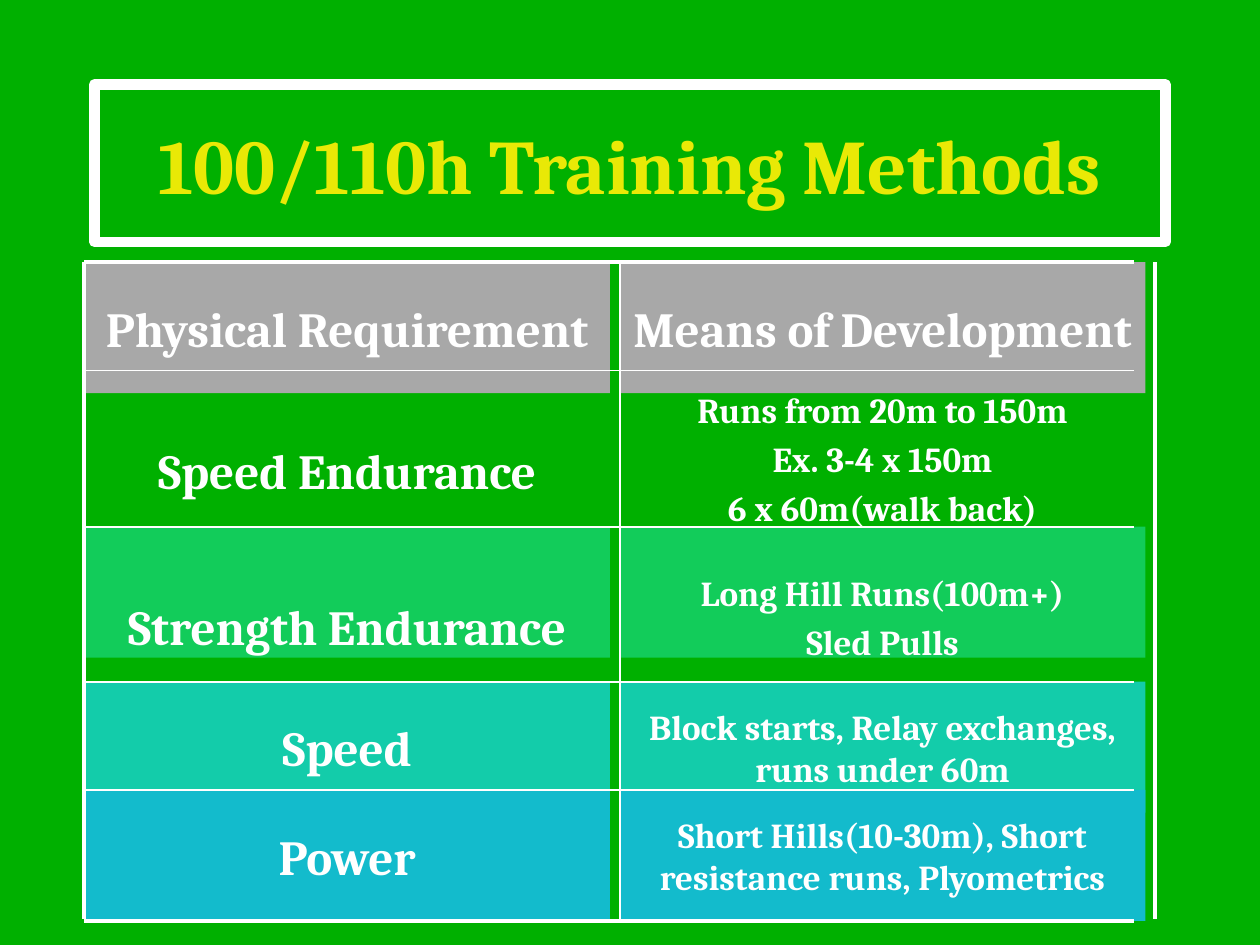
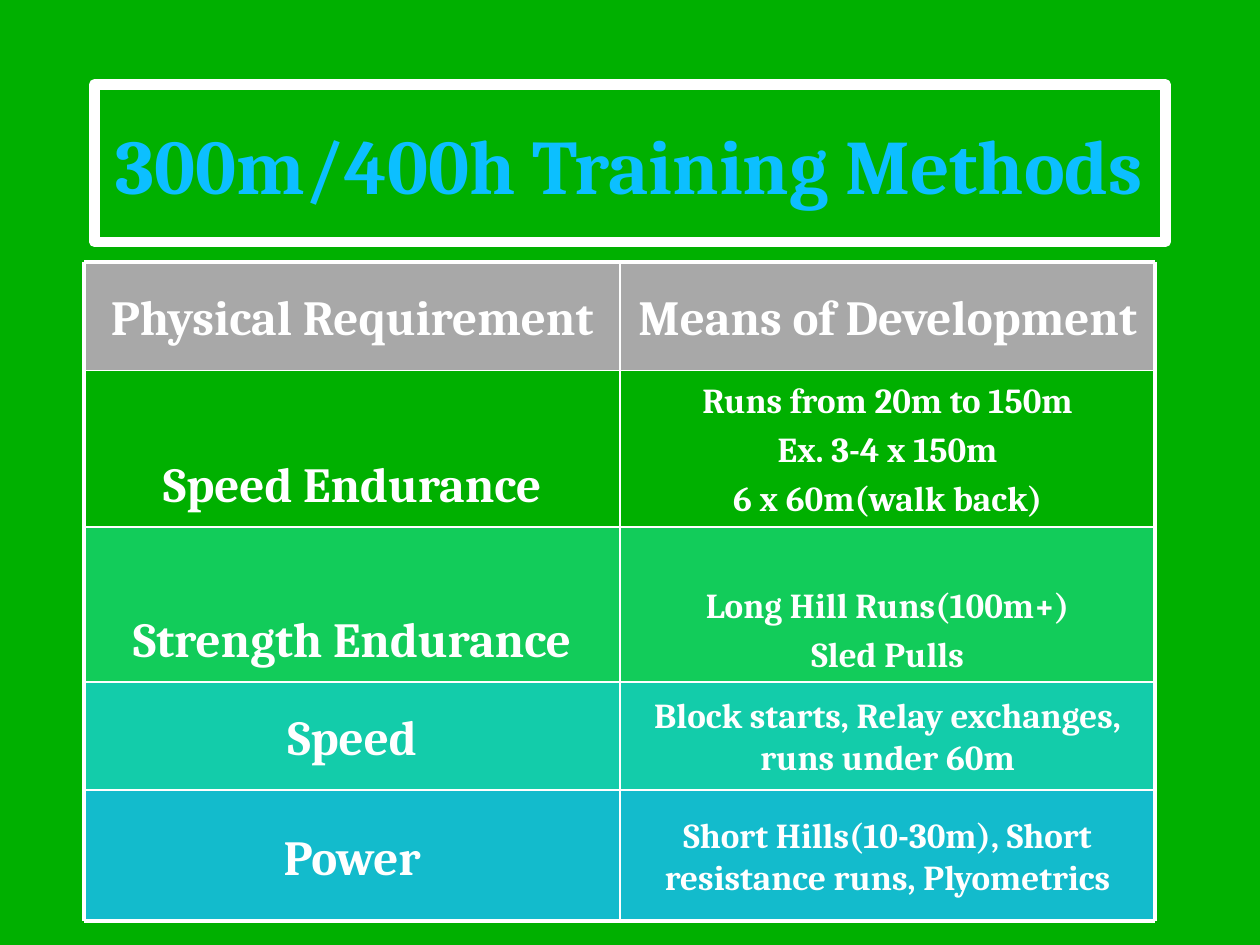
from lxml import etree
from pptx import Presentation
from pptx.dml.color import RGBColor as RGB
from pptx.enum.shapes import MSO_CONNECTOR as CONNECTOR, MSO_SHAPE as SHAPE
from pptx.enum.text import MSO_ANCHOR as ANCHOR, PP_ALIGN as ALIGN
from pptx.oxml.ns import qn
from pptx.util import Inches, Pt

COLORS = {
    "field": "00B000",
    "white": "FFFFFF",
    "yellow": "E9E906",
    "sky": "0CBFFF",
    "header": "A8A8A8",
    "strength": "12CC5A",
    "speed": "13CCAA",
    "power": "13BBCC",
}
FONT = "Cambria"
LEFT, MIDDLE, RIGHT = 0.67, 4.92, 9.17
ROW_EDGES = [2.08, 2.94, 4.18, 5.41, 6.27, 7.31]
BODY_INSETS = {"margin_left": 0.1, "margin_right": 0.1, "margin_top": 0.05, "margin_bottom": 0.05}
LABEL_DROP = {"margin_top": 0.54, "margin_bottom": 0}
DETAIL_DROP = {"margin_top": 0.39, "margin_bottom": 0}

ROWS = [
    (3, "speed", "Speed", {}, ["Block starts, Relay exchanges, runs under 60m"], {}),
    (4, "power", "Power", {}, ["Short Hills(10-30m), Short resistance runs, Plyometrics"], {}),
    (2, "strength", "Strength Endurance", LABEL_DROP, ["Long Hill Runs(100m+)", "Sled Pulls"], DETAIL_DROP),
    (1, "field", "Speed Endurance", LABEL_DROP, ["Runs from 20m to 150m", "Ex. 3-4 x 150m", "6 x 60m(walk back)"], {}),
    (0, "header", "Physical Requirement", {}, ["Means of Development"], {}),
]

SLIDES = [
    {
        "title": "100/110h Training Methods", "color": "yellow",
        "cell_width": 4.17, "cell_heights": [1.04] * 5,
        "moved_detail_tops": {1: 3.12}, "rule_right": 9, "rule_bottom": 7.29,
    },
    {
        "title": "300m/400h Training Methods", "color": "sky",
        "cell_width": 4.25,
        "cell_heights": [bottom - top for top, bottom in zip(ROW_EDGES, ROW_EDGES[1:])],
        "moved_detail_tops": {}, "rule_right": RIGHT, "rule_bottom": 7.31,
    },
]


def add_box(shapes, box, lines, size, color="white", insets={}):
    shape = shapes.add_shape(SHAPE.RECTANGLE, *[Inches(value) for value in box])
    shape.shadow.inherit = False
    shape.fill.background()
    shape.line.fill.background()
    frame = shape.text_frame
    frame.word_wrap = True
    frame.vertical_anchor = ANCHOR.MIDDLE
    for name, value in {**BODY_INSETS, **insets}.items():
        setattr(frame, name, Inches(value))
    for index, line in enumerate(lines):
        paragraph = frame.add_paragraph() if index else frame.paragraphs[0]
        paragraph.alignment = ALIGN.CENTER
        if index:
            paragraph.space_before = Pt(size * 0.2)
        run = paragraph.add_run()
        run.text = line
        for name, value in {"name": FONT, "size": Pt(size), "bold": True}.items():
            setattr(run.font, name, value)
        run.font.color.rgb = RGB.from_string(COLORS[color])
    return shape


def add_rule(shapes, ends, width):
    rule = shapes.add_connector(CONNECTOR.STRAIGHT, *[Inches(value) for value in ends])
    rule.line.color.rgb = RGB.from_string(COLORS["white"])
    rule.line.width = Pt(width)
    etree.SubElement(rule._element.spPr, qn("a:effectLst"))


presentation = Presentation()
presentation.slide_width = Inches(10)
presentation.slide_height = Inches(7.5)

for content in SLIDES:
    slide = presentation.slides.add_slide(presentation.slide_layouts[6])
    slide.background.fill.solid()
    slide.background.fill.fore_color.rgb = RGB.from_string(COLORS["field"])

    title = add_box(slide.shapes, (0.75, 0.67, 8.5, 1.25), [content["title"]], 44, content["color"])
    title.line.color.rgb = RGB.from_string(COLORS["white"])
    title.line.width = Pt(6)

    grid = slide.shapes.add_group_shape().shapes
    for row, fill, label, label_insets, details, detail_insets in ROWS:
        top = ROW_EDGES[row]
        detail_top = content["moved_detail_tops"].get(row, top)
        detail_size = 20 if row else 28
        size = content["cell_width"], content["cell_heights"][row]
        cells = [
            add_box(grid, (MIDDLE, detail_top, *size), details, detail_size, insets=detail_insets),
            add_box(grid, (LEFT, top, *size), [label], 28, insets=label_insets),
        ]
        for cell in cells:
            cell.fill.solid()
            cell.fill.fore_color.rgb = RGB.from_string(COLORS[fill])

    for edge in ROW_EDGES:
        width = 2.25 if edge in (ROW_EDGES[0], ROW_EDGES[-1]) else 1
        add_rule(grid, (LEFT, edge, content["rule_right"], edge), width)
    for edge in (LEFT, MIDDLE, RIGHT):
        width = 1 if edge == MIDDLE else 2.25
        add_rule(grid, (edge, ROW_EDGES[0], edge, content["rule_bottom"]), width)

presentation.save("out.pptx")
